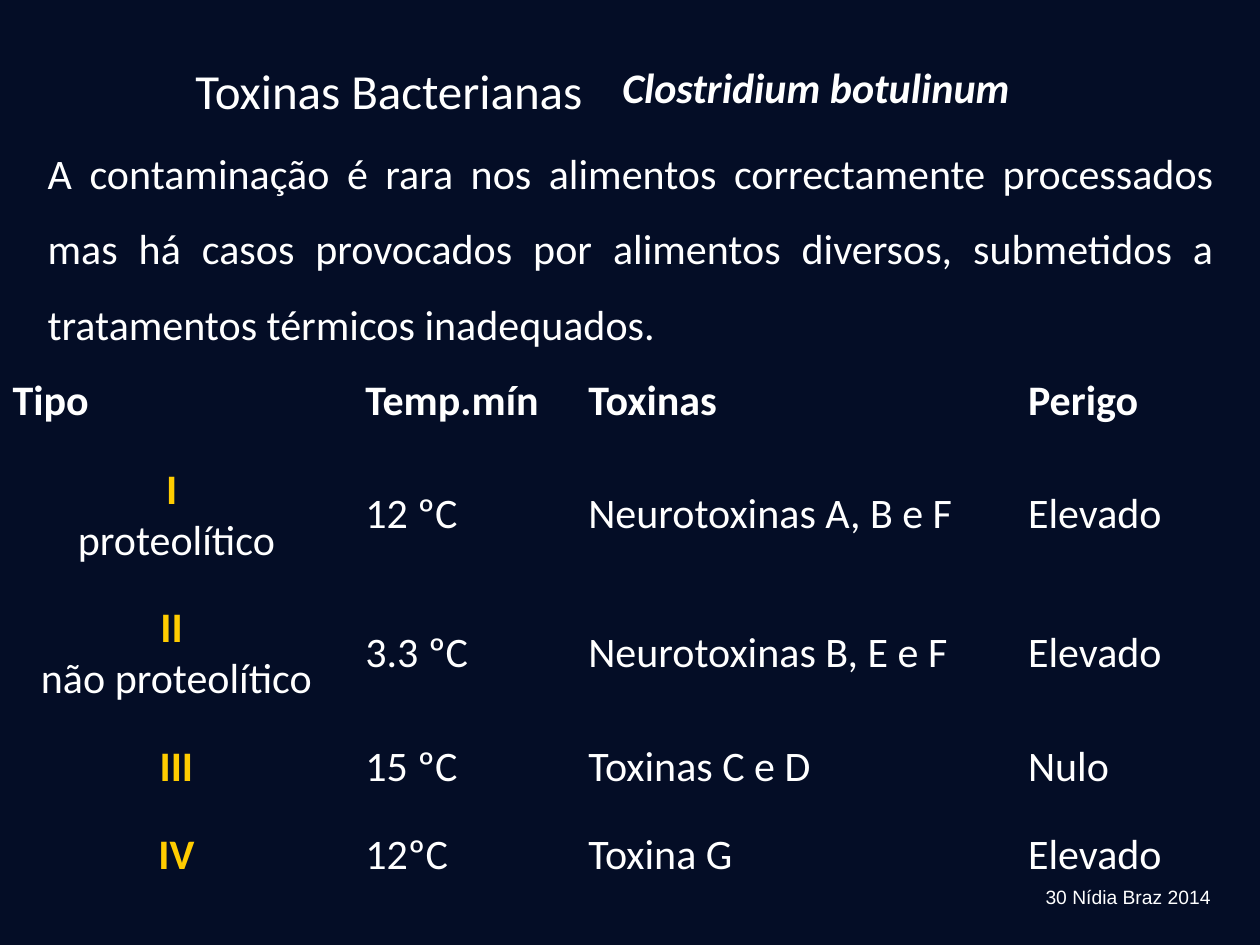
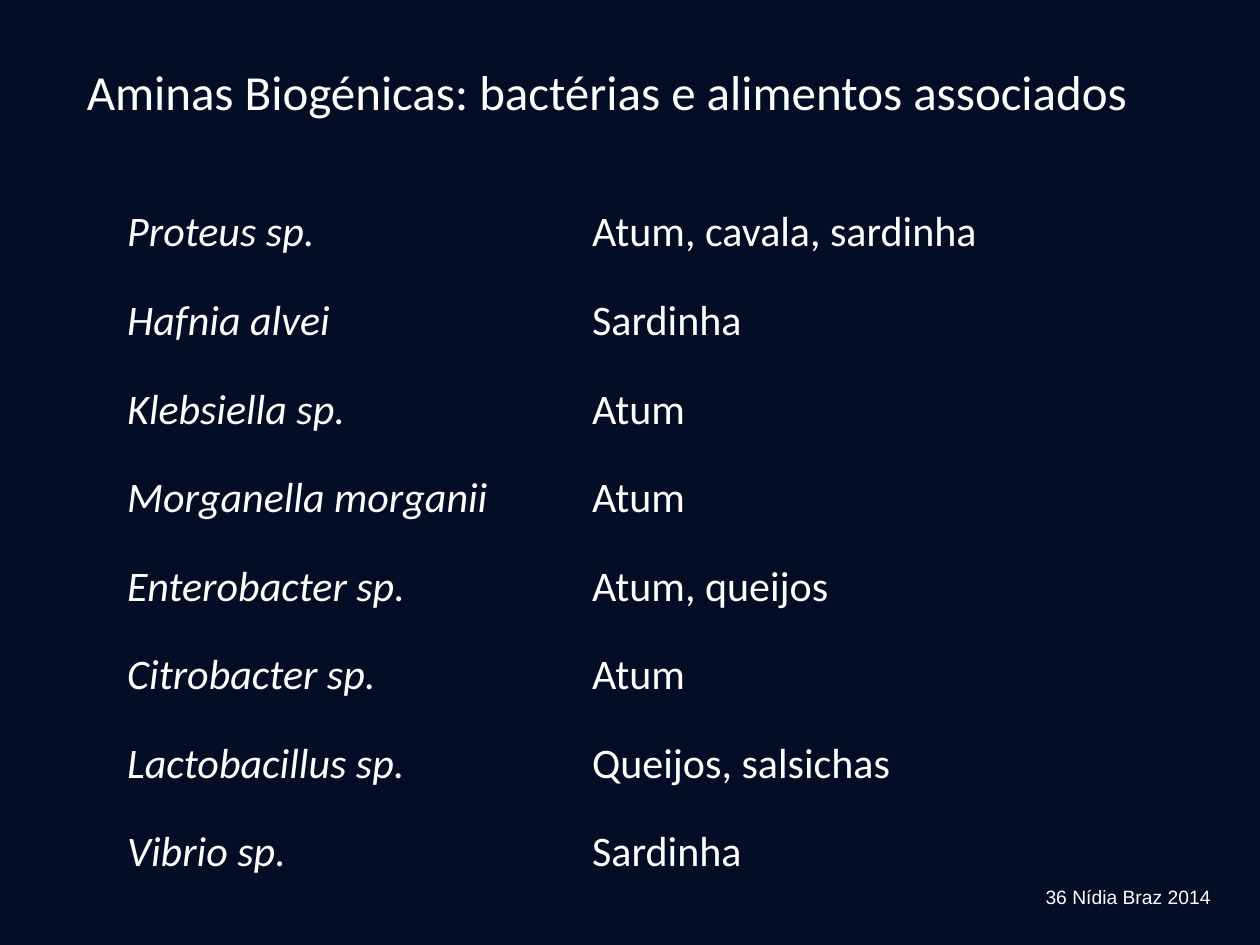
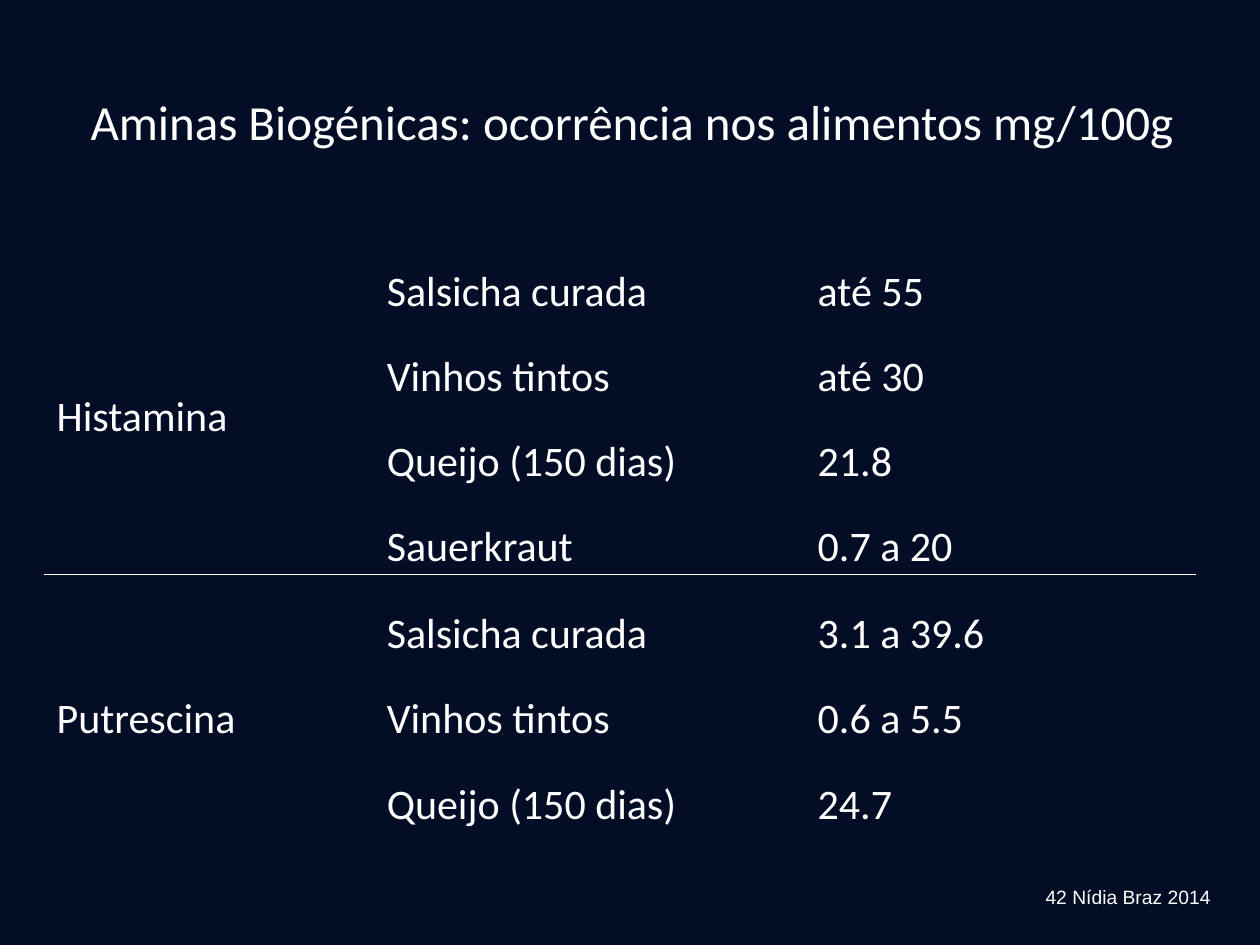
from dataclasses import dataclass, replace
from typing import NamedTuple

from lxml import etree
from pptx import Presentation
from pptx import util as u
from pptx.dml.color import RGBColor
from pptx.enum import text
from pptx.oxml import ns

NAVY, WHITE, GOLD = "040D26", "FFFFFF", "FFCC00"
COLS, ROWS = 100, 75
PLAIN = "{2D5ABB26-0587-4C30-8999-92F81FD0307C}"
CENTER, JUSTIFY = text.PP_ALIGN.CENTER, text.PP_ALIGN.JUSTIFY
MIDDLE = text.MSO_ANCHOR.MIDDLE


class Box(NamedTuple):
    col: float
    row: float
    wide: float
    high: float


@dataclass(frozen=True)
class Line:
    words: str
    size: float = 24
    face: str = "Calibri"
    hue: str = WHITE
    bold: bool = False
    slant: bool = False
    align: text.PP_ALIGN | None = None
    lead: float | None = None
    gap: float | None = None


@dataclass(frozen=True)
class Grid:
    left: float
    top: float
    wides: list[float]
    highs: list[float]
    cells: list[list[list[Line]]]
    rule: int | None = None


ROW = Line("", lead=1.5, gap=4.8)
HEAD = replace(ROW, bold=True)
KIND = replace(HEAD, hue=GOLD, align=CENTER)
NAME = replace(ROW, slant=True, gap=None)
FOOD = replace(ROW, gap=None)
TITLE = Line("", size=28)
FOOT = Line("", size=11, face="Arial", align=CENTER)

prs = Presentation()
prs.slide_width, prs.slide_height = u.Inches(10), u.Inches(7.5)


def paint(code: str) -> RGBColor:
    return RGBColor.from_string(code)


def across(n: float) -> int:
    return round(prs.slide_width * n / COLS)


def down(n: float) -> int:
    return round(prs.slide_height * n / ROWS)


def lines(style: Line, *words: str) -> list[Line]:
    return [replace(style, words=w) for w in words]


def write(frame, items: list[Line]) -> None:
    for i, item in enumerate(items):
        par = frame.add_paragraph() if i else frame.paragraphs[0]
        par.text = item.words
        par.alignment = item.align
        par.line_spacing = item.lead
        if item.gap:
            par.space_before = u.Pt(item.gap)
        font = par.font
        font.name, font.size = item.face, u.Pt(item.size)
        font.bold, font.italic = item.bold, item.slant
        font.color.rgb = paint(item.hue)


def label(slide, box: Box, item: Line, wrap: bool = True, anchor=None) -> None:
    shape = slide.shapes.add_textbox(
        across(box.col), down(box.row), across(box.wide), down(box.high))
    frame = shape.text_frame
    frame.word_wrap = wrap
    frame.vertical_anchor = anchor
    write(frame, [item])


def rule(cell) -> None:
    edge = etree.Element(ns.qn("a:lnB"), w=str(u.Pt(1)))
    fill = etree.SubElement(edge, ns.qn("a:solidFill"))
    etree.SubElement(fill, ns.qn("a:srgbClr"), val=WHITE)
    cell._tc.get_or_add_tcPr().insert(0, edge)


def table(slide, grid: Grid) -> None:
    tab = slide.shapes.add_table(
        len(grid.highs), len(grid.wides), across(grid.left), down(grid.top),
        across(sum(grid.wides)), down(sum(grid.highs))).table
    tab.first_row = tab.horz_banding = False
    tab._tbl.tblPr.find(ns.qn("a:tableStyleId")).text = PLAIN
    for col, wide in zip(tab.columns, grid.wides):
        col.width = across(wide)
    for r, (row, high) in enumerate(zip(tab.rows, grid.highs)):
        row.height = down(high)
        for cell, items in zip(row.cells, grid.cells[r]):
            cell.fill.background()
            cell.vertical_anchor = MIDDLE
            write(cell.text_frame, items)
            if r == grid.rule:
                rule(cell)


def page(number: int):
    slide = prs.slides.add_slide(prs.slide_layouts[6])
    label(slide, Box(81.5, 69.8, 16.5, 2.9),
          replace(FOOT, words=f"{number} Nídia Braz 2014 "))
    return slide


def toxins() -> None:
    slide = page(30)
    kinds = [
        ("I ", "proteolítico", "12 ºC", "Neurotoxinas A, B e F", "Elevado"),
        ("II ", "não proteolítico", "3.3 ºC", "Neurotoxinas B, E e F", "Elevado"),
        ("III", "", "15 ºC", "Toxinas C e D", "Nulo"),
        ("IV", "", "12ºC", "Toxina G", "Elevado"),
    ]
    cells = [[[h] for h in lines(HEAD, "Tipo", "Temp.mín", "Toxinas", "Perigo")]]
    for kind, note, *facts in kinds:
        first = lines(KIND, kind)
        if note:
            first.append(Line(note, align=CENTER))
        cells.append([first] + [[f] for f in lines(ROW, *facts)])
    table(slide, Grid(0, 27.3, [28, 17.7, 34.9, 17.4], [7, 11, 11, 7, 7], cells))
    label(slide, Box(0, 3.1, 62.6, 8.1),
          replace(TITLE, words="Toxinas Bacterianas ", align=CENTER), anchor=MIDDLE)
    label(slide, Box(2.8, 9.2, 94.5, 18.5), Line(
        "A contaminação é rara nos alimentos correctamente processados "
        "mas há casos provocados por alimentos diversos, submetidos a "
        "tratamentos térmicos inadequados.", align=JUSTIFY, lead=1.5))
    label(slide, Box(48.4, 4.4, 33.8, 5),
          Line("Clostridium botulinum", bold=True, slant=True), wrap=False)


def foods() -> None:
    slide = page(36)
    label(slide, Box(5.9, 4.4, 89.1, 7.1), replace(
        TITLE, words="Aminas Biogénicas: bactérias e alimentos associados"))
    pairs = [
        ("Proteus sp.", "Atum, cavala, sardinha"),
        ("Hafnia alvei", "Sardinha"),
        ("Klebsiella sp.", "Atum"),
        ("Morganella morganii", "Atum"),
        ("Enterobacter sp.", "Atum, queijos"),
        ("Citrobacter sp.", "Atum"),
        ("Lactobacillus sp.", "Queijos, salsichas"),
        ("Vibrio sp.", "Sardinha"),
    ]
    cells = [[lines(NAME, name), lines(FOOD, food)] for name, food in pairs]
    table(slide, Grid(9.1, 13.9, [36.9, 45.8], [7.03] * len(pairs), cells))


def levels() -> None:
    slide = page(42)
    label(slide, Box(6.2, 6.8, 93.8, 9.7), replace(
        TITLE, words="Aminas Biogénicas: ocorrência nos alimentos mg/100g"))
    meals = ["Salsicha curada", "Vinhos tintos", "Queijo (150 dias)", "Sauerkraut"]
    amines = [
        ("Histamina", ["até 55", "até 30", "21.8", "0.7 a 20"]),
        ("Putrescina", ["3.1 a 39.6", "0.6 a 5.5", "24.7"]),
    ]
    cells = [[lines(ROW, name), lines(ROW, *meals[:len(doses)]), lines(ROW, *doses)]
             for name, doses in amines]
    table(slide, Grid(3.5, 18.6, [26.2, 34.2, 31], [27, 21], cells, rule=0))


def main() -> None:
    back = prs.slide_master.background.fill
    back.solid()
    back.fore_color.rgb = paint(NAVY)
    toxins()
    foods()
    levels()
    prs.save("out.pptx")


if __name__ == "__main__":
    main()
